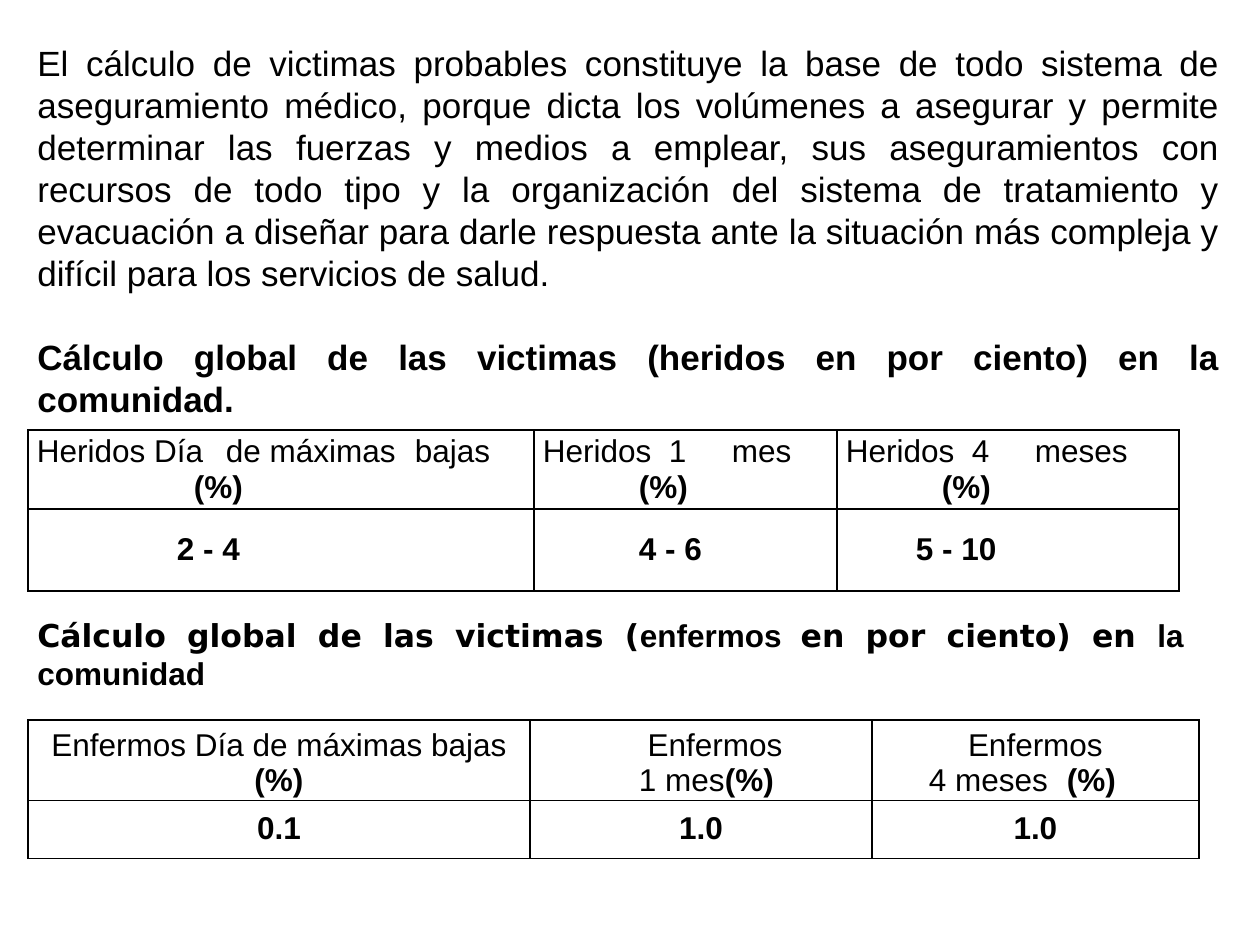
from dataclasses import dataclass

from lxml.etree import SubElement
from pptx import Presentation
from pptx.dml.color import RGBColor
from pptx.enum.text import MSO_ANCHOR, PP_ALIGN
from pptx.oxml.ns import qn
from pptx.util import Emu, Pt

SCALE = 914400 / 126
INK = "000000"
LEFT, MID, JUST = PP_ALIGN.LEFT, PP_ALIGN.CENTER, PP_ALIGN.JUSTIFY


@dataclass(frozen=True)
class Run:
    text: str
    bold: bool = False
    face: str = "Arial"


@dataclass(frozen=True)
class Para:
    runs: tuple[Run, ...]
    align: PP_ALIGN = LEFT
    indent: int = 0
    tabs: tuple[int, ...] = ()
    before: int = 0


@dataclass(frozen=True)
class Row:
    high: int
    cells: tuple[tuple[Para, ...], ...]
    inset: tuple[int, int]
    anchor: MSO_ANCHOR = MSO_ANCHOR.MIDDLE


@dataclass(frozen=True)
class Grid:
    left: int
    top: int
    cols: tuple[int, ...]
    rows: tuple[Row, ...]


def px(size: int) -> Emu:
    return Emu(round(size * SCALE))


def color(code: str) -> RGBColor:
    return RGBColor.from_string(code)


def plain(text: str, **form) -> Para:
    return Para((Run(text),), **form)


def bold(text: str, **form) -> Para:
    return Para((Run(text, True),), **form)


def write(frame, paras: tuple[Para, ...], size: int) -> None:
    frame.word_wrap = True
    frame.text = "\n".join("".join(r.text for r in p.runs) for p in paras)
    for para, spot in zip(paras, frame.paragraphs):
        spot.alignment = para.align
        if para.before:
            spot.space_before = Pt(para.before)
        props = spot._p.get_or_add_pPr()
        props.set("marL", "0")
        props.set("indent", str(px(para.indent)))
        if para.tabs:
            stops = SubElement(props, qn("a:tabLst"))
            for tab in para.tabs:
                SubElement(stops, qn("a:tab"), pos=str(px(tab)), algn="l")
        spot.runs[0].text = para.runs[0].text
        for _ in para.runs[1:]:
            spot.add_run()
        for part, run in zip(para.runs, spot.runs):
            run.text = part.text
            run.font.name = part.face
            run.font.size = Pt(size)
            run.font.bold = part.bold
            run.font.color.rgb = color(INK)


def box(slide, rect: tuple[int, ...], paras: tuple[Para, ...], size: int) -> None:
    shape = slide.shapes.add_textbox(*map(px, rect))
    write(shape.text_frame, paras, size)


def frame(cell) -> None:
    props = cell._tc.get_or_add_tcPr()
    for at, side in enumerate(("lnL", "lnR", "lnT", "lnB")):
        line = props.makeelement(qn(f"a:{side}"), {"w": str(Pt(1))})
        fill = SubElement(line, qn("a:solidFill"))
        SubElement(fill, qn("a:srgbClr"), val=INK)
        props.insert(at, line)


def draw(slide, grid: Grid) -> None:
    wide, high = sum(grid.cols), sum(row.high for row in grid.rows)
    rect = map(px, (grid.left, grid.top, wide, high))
    table = slide.shapes.add_table(len(grid.rows), len(grid.cols), *rect).table
    table.first_row = table.horz_banding = False
    for col, size in zip(table.columns, grid.cols):
        col.width = px(size)
    for i, row in enumerate(grid.rows):
        table.rows[i].height = px(row.high)
        for j, paras in enumerate(row.cells):
            cell = table.cell(i, j)
            side, top = row.inset
            cell.margin_left = cell.margin_right = px(side)
            cell.margin_top, cell.margin_bottom = px(top), 0
            cell.vertical_anchor = row.anchor
            cell.fill.background()
            frame(cell)
            write(cell.text_frame, paras, 18)


INTRO = (
    plain(
        "El cálculo de victimas probables constituye la base de todo sistema de "
        "aseguramiento médico, porque dicta los volúmenes a asegurar y permite "
        "determinar las fuerzas y medios a emplear, sus aseguramientos con recursos "
        "de todo tipo y la organización del sistema de tratamiento y evacuación a "
        "diseñar para darle respuesta ante la situación más compleja y difícil para "
        "los servicios de salud.",
        align=JUST,
    ),
    bold(
        "Cálculo global de las victimas (heridos en por ciento) en la comunidad.",
        align=JUST,
        before=24,
    ),
)

TITLE = Para(
    (
        Run("Cálculo global de las victimas (", True, "DejaVu Sans"),
        Run("enfermos ", True),
        Run("en por ciento) en ", True, "DejaVu Sans"),
        Run("la comunidad", True),
    ),
    JUST,
)

HURT = Grid(28, 430, (506, 303, 342), (
    Row(79, (
        (plain("Heridos Día\tde máximas\tbajas", tabs=(185, 402)), bold("(%)", indent=157)),
        (plain("Heridos\t1\tmes", tabs=(135, 170)), bold("(%)", indent=96)),
        (plain("Heridos\t4\tmeses", tabs=(127, 162)), bold("(%)", indent=96)),
    ), (9, 0)),
    Row(82, (
        (bold("2 - 4", indent=140),),
        (bold("4 - 6", indent=96),),
        (bold("5 - 10", indent=70),),
    ), (9, 0)),
))


def span(text: str, indent: int) -> Para:
    return Para((Run(f"{text}\t"), Run("(%)", True)), indent=indent, tabs=(232,))


SICK = Grid(28, 720, (502, 342, 327), (
    Row(80, (
        (Para((Run("Enfermos Día de máximas bajas"), Run(" (%)", True)), MID),),
        (plain("Enfermos", align=MID, indent=28), span("1 mes", 103)),
        (plain("Enfermos", align=MID), span("4 meses", 51)),
    ), (6, 5)),
    Row(58, tuple((bold(rate, align=MID),) for rate in ("0.1", "1.0", "1.0")),
        (6, 10), MSO_ANCHOR.TOP),
))


def main() -> None:
    """Build the slide on estimated casualties and save it."""
    deck = Presentation()
    deck.slide_width, deck.slide_height = px(1260), px(945)
    slide = deck.slides.add_slide(deck.slide_layouts[6])
    box(slide, (25, 35, 1207, 437), INTRO, 20)
    draw(slide, HURT)
    box(slide, (25, 610, 1171, 89), (TITLE,), 18)
    draw(slide, SICK)
    deck.save("out.pptx")


if __name__ == "__main__":
    main()
